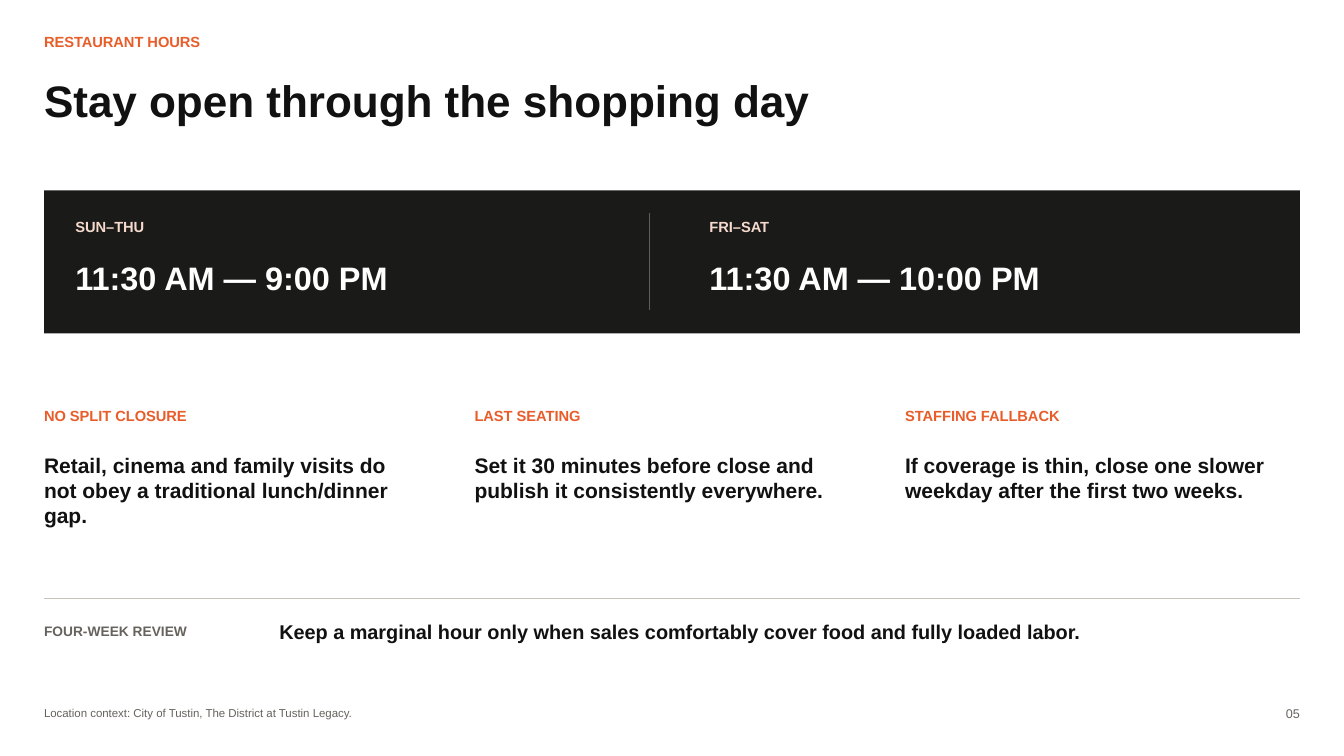
from pptx import Presentation
from pptx.dml.color import RGBColor
from pptx.enum.shapes import MSO_CONNECTOR, MSO_SHAPE
from pptx.enum.text import PP_ALIGN
from pptx.oxml.ns import qn
from pptx.util import Cm, Pt
from lxml import etree

LINE = MSO_CONNECTOR.STRAIGHT
RECT = MSO_SHAPE.RECTANGLE
LEFT, RIGHT = PP_ALIGN.LEFT, PP_ALIGN.RIGHT

ORANGE = RGBColor(0xE8, 0x5D, 0x2A)
INK = RGBColor(0x11, 0x11, 0x11)
GREY = RGBColor(0x66, 0x63, 0x5D)
PANEL = RGBColor(0x1A, 0x1A, 0x18)
PEACH = RGBColor(0xF5, 0xD9, 0xCD)
WHITE = RGBColor(0xFF, 0xFF, 0xFF)
DIVIDER = RGBColor(0x5F, 0x5E, 0x59)
RULE = RGBColor(0xC9, 0xC3, 0xB8)

MARGIN = 1.11
CONTENT_W = 31.65
COLUMN_STEP = 10.85

HOURS = [
    (1.9, "SUN–THU", "11:30 AM — 9:00 PM"),
    (17.88, "FRI–SAT", "11:30 AM — 10:00 PM"),
]
POLICIES = [
    ("NO SPLIT CLOSURE",
     "Retail, cinema and family visits do not obey a traditional lunch/dinner gap."),
    ("LAST SEATING",
     "Set it 30 minutes before close and publish it consistently everywhere."),
    ("STAFFING FALLBACK",
     "If coverage is thin, close one slower weekday after the first two weeks."),
]


def add_text(s, text, x, y, w, h, size, color, bold=True, align=LEFT):
    tf = s.shapes.add_textbox(Cm(x), Cm(y), Cm(w), Cm(h)).text_frame
    tf.margin_left = tf.margin_right = tf.margin_top = tf.margin_bottom = 0
    tf.word_wrap = True
    tf.text = text
    p = tf.paragraphs[0]
    p.alignment = align
    font = p.runs[0].font
    font.name = "Arial"
    font.size = Pt(size)
    font.bold = bold
    font.color.rgb = color


def add_panel(s, x, y, w, h, color):
    sp = s.shapes.add_shape(RECT, Cm(x), Cm(y), Cm(w), Cm(h))
    sp.shadow.inherit = False
    sp.fill.solid()
    sp.fill.fore_color.rgb = color
    sp.line.fill.background()


def add_line(s, x1, y1, x2, y2, color):
    line = s.shapes.add_connector(LINE, Cm(x1), Cm(y1), Cm(x2), Cm(y2))
    line.line.color.rgb = color
    line.line.width = Pt(0.75)
    etree.SubElement(line._element.spPr, qn("a:effectLst"))


def main():
    prs = Presentation()
    prs.slide_width, prs.slide_height = Cm(33.87), Cm(19.05)
    s = prs.slides.add_slide(prs.slide_layouts[6])

    # Heading
    add_text(s, "RESTAURANT HOURS", MARGIN, 0.83, 9.27, 0.58, 10.5, ORANGE)
    add_text(s, "Stay open through the shopping day",
             MARGIN, 1.85, 29.64, 1.9, 31.5, INK)

    # Opening hours panel
    add_panel(s, MARGIN, 4.8, CONTENT_W, 3.6, PANEL)
    add_line(s, 16.37, 5.37, 16.37, 7.81, DIVIDER)
    for x, days, hours in HOURS:
        add_text(s, days, x, 5.49, 6.1, 0.64, 10.5, PEACH)
        add_text(s, hours, x, 6.5, 12.17, 1.22, 23.2, WHITE)

    # Policy columns
    for i, (label, policy) in enumerate(POLICIES):
        x = MARGIN + i * COLUMN_STEP
        add_text(s, label, x, 10.26, 9, 0.53, 10.5, ORANGE)
        add_text(s, policy, x, 11.4, 9.1, 2.44, 15, INK)

    # Review note
    add_line(s, MARGIN, 15.07, MARGIN + CONTENT_W, 15.07, RULE)
    add_text(s, "FOUR-WEEK REVIEW", MARGIN, 15.7, 5.03, 0.58, 9.8, GREY)
    add_text(s, "Keep a marginal hour only when sales comfortably cover food "
             "and fully loaded labor.", 7.04, 15.62, 23.83, 0.89, 14.2, INK)

    # Footer
    add_text(s, "Location context: City of Tustin, The District at Tustin Legacy.",
             MARGIN, 17.78, 28.32, 0.48, 8.2, GREY, bold=False)
    add_text(s, "05", 31.54, 17.78, 1.22, 0.48, 9, GREY, bold=False, align=RIGHT)

    prs.save("out.pptx")


if __name__ == "__main__":
    main()
